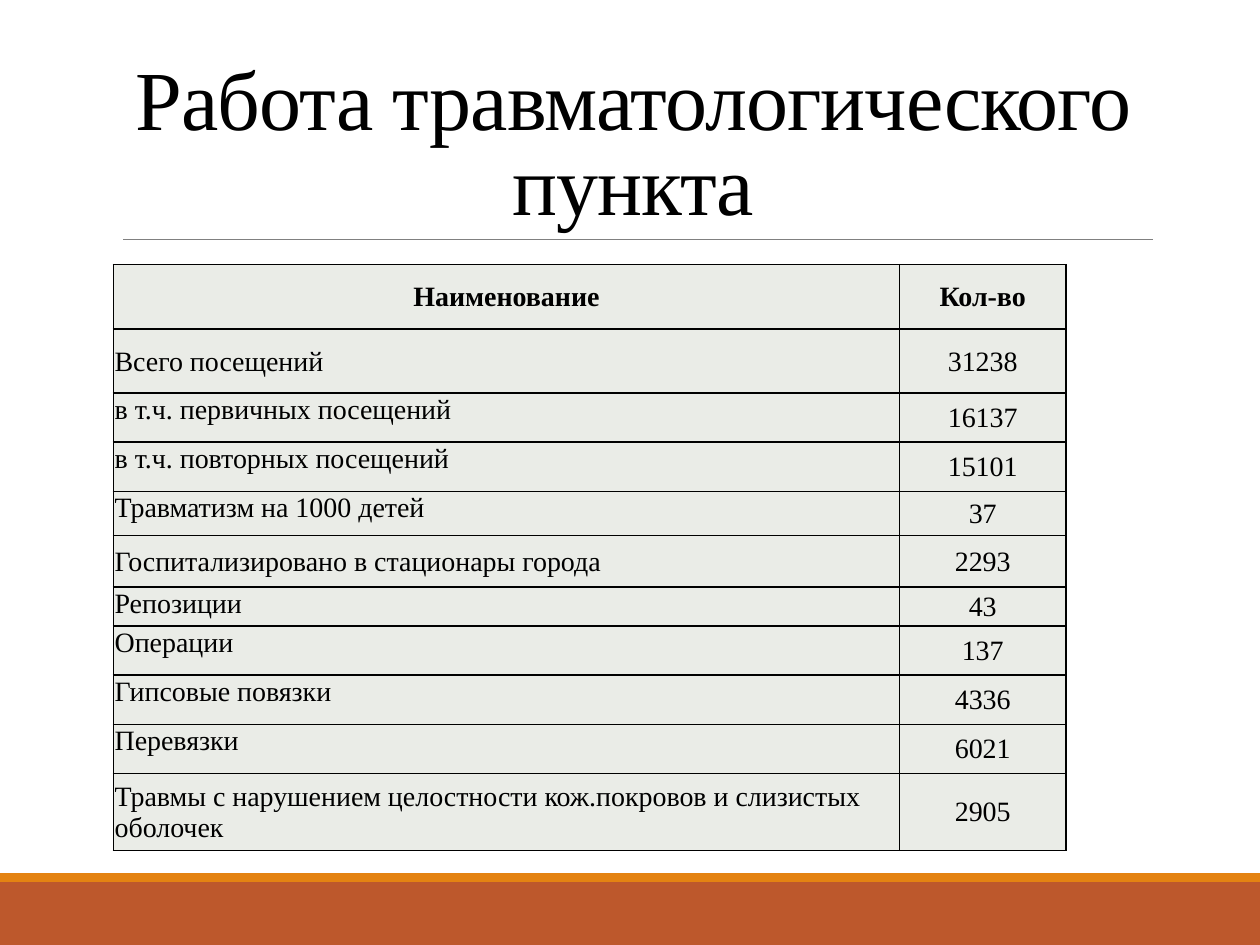
"""Build the slide on the work of the trauma unit."""
import dataclasses

import lxml.etree
import pptx
import pptx.dml.color
import pptx.enum.shapes
import pptx.enum.text
import pptx.oxml.ns
import pptx.slide
import pptx.table
import pptx.text.text
import pptx.util

Inches = pptx.util.Inches
Pt = pptx.util.Pt
RGBColor = pptx.dml.color.RGBColor
Align = pptx.enum.text.PP_ALIGN
Anchor = pptx.enum.text.MSO_ANCHOR
qn = pptx.oxml.ns.qn

BLACK = RGBColor(0x00, 0x00, 0x00)
GRAY = RGBColor(0x80, 0x80, 0x80)
PALE = RGBColor(0xEA, 0xEC, 0xE7)
RUST = RGBColor(0xBD, 0x58, 0x2C)
AMBER = RGBColor(0xE4, 0x83, 0x12)
FONT = "Times New Roman"


@dataclasses.dataclass
class Band:
    top: float
    height: float
    color: RGBColor


@dataclasses.dataclass
class Row:
    name: str
    count: str
    height: float
    anchor: Anchor = Anchor.TOP
    head: bool = False


BANDS = [Band(7, 0.5, RUST), Band(6.93, 0.07, AMBER)]
WIDTHS = [6.24, 1.32]
ROWS = [
    Row("Наименование", "Кол-во", 0.51, Anchor.MIDDLE, True),
    Row("Всего посещений", "31238", 0.51, Anchor.MIDDLE),
    Row("в т.ч. первичных посещений", "16137", 0.39),
    Row("в т.ч. повторных посещений", "15101", 0.39),
    Row("Травматизм на 1000 детей", "37", 0.35),
    Row("Госпитализировано в стационары города", "2293", 0.41, Anchor.MIDDLE),
    Row("Репозиции", "43", 0.31),
    Row("Операции", "137", 0.39),
    Row("Гипсовые повязки", "4336", 0.39),
    Row("Перевязки", "6021", 0.39),
    Row("Травмы с нарушением целостности кож.покровов и слизистых оболочек",
        "2905", 0.61, Anchor.MIDDLE),
]


def style(par: pptx.text.text._Paragraph, size: float, bold: bool, align: Align) -> None:
    """Format a paragraph and its runs."""
    par.alignment = align
    for run in par.runs:
        run.font.name = FONT
        run.font.size = Pt(size)
        run.font.bold = bold
        run.font.color.rgb = BLACK


def draw_band(slide: pptx.slide.Slide, band: Band) -> None:
    """Draw a full-width band."""
    shape = slide.shapes.add_shape(
        pptx.enum.shapes.MSO_SHAPE.RECTANGLE,
        0, Inches(band.top), Inches(10), Inches(band.height))
    shape.shadow.inherit = False
    shape.fill.solid()
    shape.fill.fore_color.rgb = band.color
    shape.line.fill.background()


def draw_rule(slide: pptx.slide.Slide) -> None:
    """Draw the thin line under the title."""
    rule = slide.shapes.add_connector(
        pptx.enum.shapes.MSO_CONNECTOR.STRAIGHT,
        Inches(0.98), Inches(1.9), Inches(9.15), Inches(1.9))
    rule.line.color.rgb = GRAY
    rule.line.width = Pt(0.5)
    lxml.etree.SubElement(rule._element.spPr, qn("a:effectLst"))


def set_title(slide: pptx.slide.Slide) -> None:
    """Place and format the title."""
    title = slide.shapes.title
    title.left, title.top = Inches(0.9), Inches(0.31)
    title.width, title.height = Inches(8.25), Inches(1.59)
    frame = title.text_frame
    frame.text = "Работа травматологического пункта"
    frame.word_wrap = True
    frame.auto_size = pptx.enum.text.MSO_AUTO_SIZE.NONE
    frame.vertical_anchor = Anchor.BOTTOM
    par = frame.paragraphs[0]
    par.line_spacing = 0.85
    style(par, 48, False, Align.CENTER)
    par.runs[0]._r.get_or_add_rPr().set("spc", "-50")


def add_edges(cell: pptx.table._Cell) -> None:
    """Give a cell thin black borders."""
    props = cell._tc.get_or_add_tcPr()
    for side in ("L", "R", "T", "B"):
        edge = lxml.etree.SubElement(props, qn(f"a:ln{side}"), w=str(Pt(1)))
        fill = lxml.etree.SubElement(edge, qn("a:solidFill"))
        lxml.etree.SubElement(fill, qn("a:srgbClr"), val=str(BLACK))


def fill_cell(cell: pptx.table._Cell, text: str, bold: bool,
              align: Align, anchor: Anchor) -> None:
    """Write and format one cell."""
    cell.text_frame.text = text
    style(cell.text_frame.paragraphs[0], 16, bold, align)
    cell.vertical_anchor = anchor
    cell.margin_left = cell.margin_right = cell.margin_top = Inches(0.01)
    cell.margin_bottom = 0
    add_edges(cell)
    cell.fill.solid()
    cell.fill.fore_color.rgb = PALE


def draw_table(slide: pptx.slide.Slide) -> None:
    """Draw the table of counts."""
    table = slide.shapes.add_table(
        len(ROWS), len(WIDTHS), Inches(0.9), Inches(2.1),
        Inches(sum(WIDTHS)), Inches(sum(row.height for row in ROWS))).table
    for col, width in zip(table.columns, WIDTHS):
        col.width = Inches(width)
    for num, row in enumerate(ROWS):
        table.rows[num].height = Inches(row.height)
        align = Align.CENTER if row.head else Align.LEFT
        fill_cell(table.cell(num, 0), row.name, row.head, align, row.anchor)
        fill_cell(table.cell(num, 1), row.count, row.head, Align.CENTER, Anchor.MIDDLE)


def main() -> None:
    """Build and save the deck."""
    deck = pptx.Presentation()
    deck.slide_width, deck.slide_height = Inches(10), Inches(7.5)
    slide = deck.slides.add_slide(deck.slide_layouts[5])
    for band in BANDS:
        draw_band(slide, band)
    draw_rule(slide)
    set_title(slide)
    draw_table(slide)
    deck.save("out.pptx")


if __name__ == "__main__":
    main()
